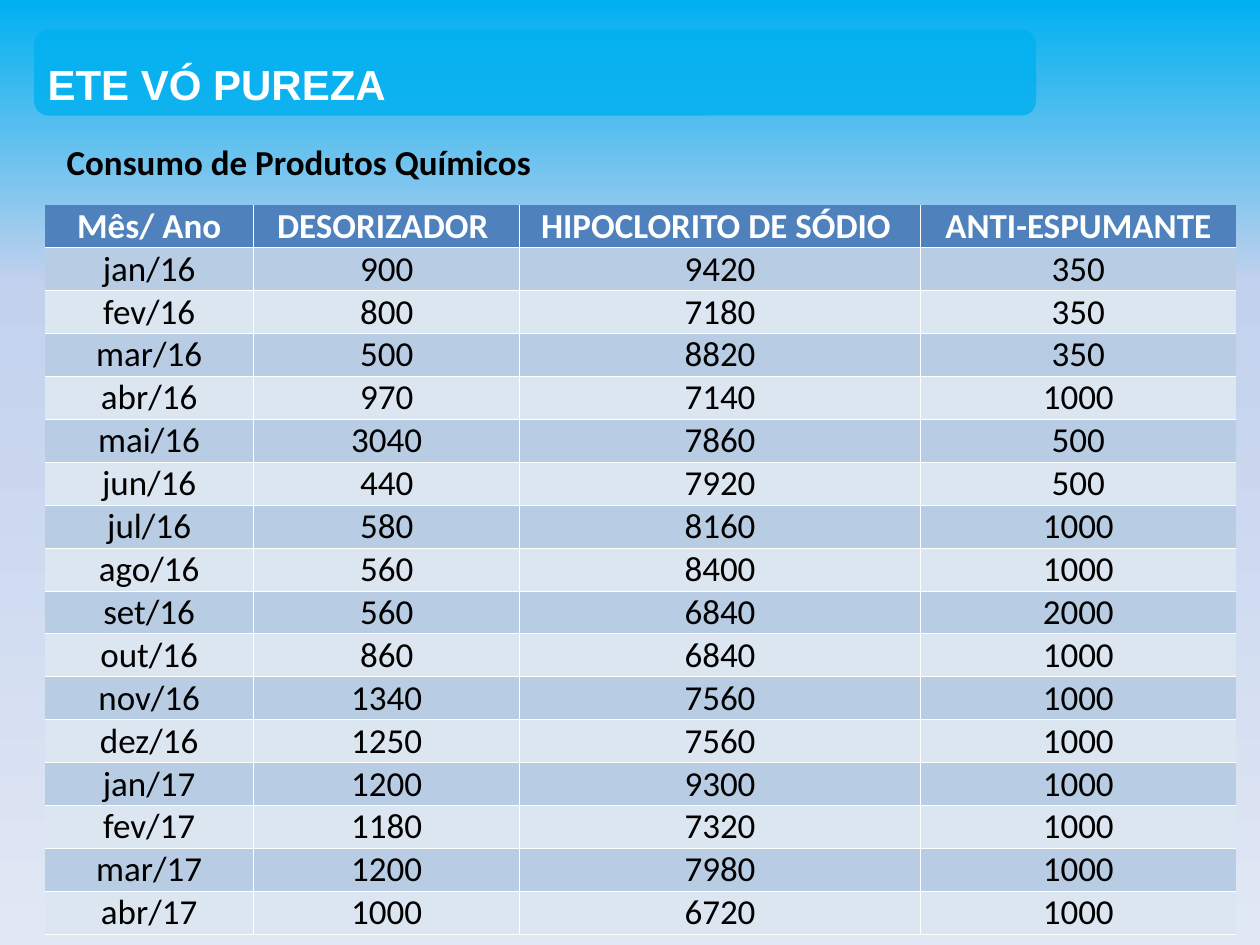
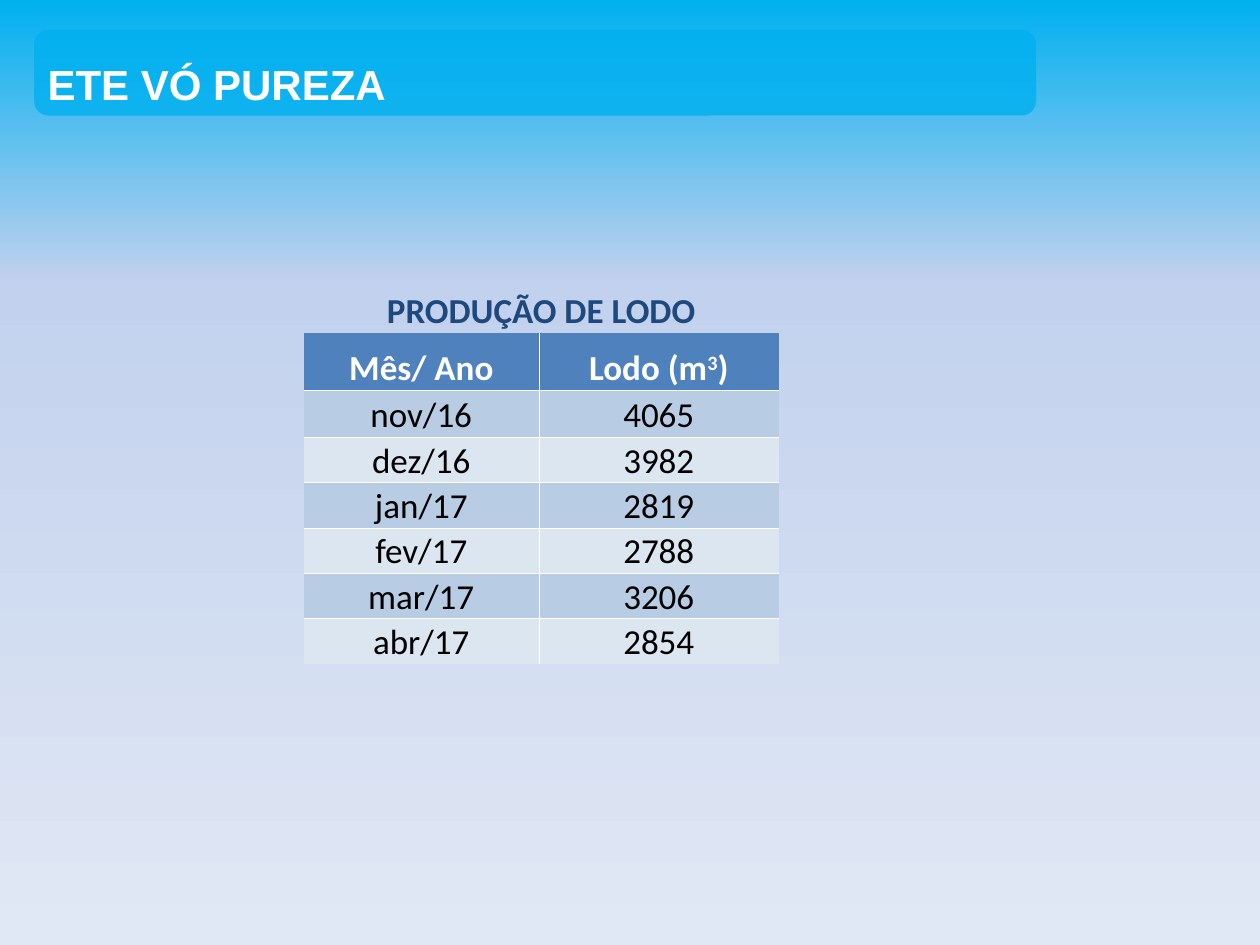
from lxml import etree
from pptx import Presentation
from pptx.dml.color import RGBColor
from pptx.enum.shapes import MSO_SHAPE as Shape
from pptx.enum.text import MSO_ANCHOR as Anchor, PP_ALIGN as Align
from pptx.oxml.ns import qn
from pptx.util import Pt

SKY, WHITE, BLACK, NAVY = "00B0F0", "FFFFFF", "000000", "1F497D"
HEADER_FILL = "4F81BD"
BAND_FILLS = ("B8CCE4", "DCE6F1")
BACKGROUND_STOPS = ((0, SKY), (30, "C2D1ED"), (100, "E1E8F5"))
TITLE = "ETE VÓ PUREZA"

CHEMICALS = [
    ("Mês/ Ano", "DESORIZADOR ", "HIPOCLORITO DE SÓDIO ", "ANTI-ESPUMANTE"),
    ("jan/16", 900, 9420, 350),
    ("fev/16", 800, 7180, 350),
    ("mar/16", 500, 8820, 350),
    ("abr/16", 970, 7140, 1000),
    ("mai/16", 3040, 7860, 500),
    ("jun/16", 440, 7920, 500),
    ("jul/16", 580, 8160, 1000),
    ("ago/16", 560, 8400, 1000),
    ("set/16", 560, 6840, 2000),
    ("out/16", 860, 6840, 1000),
    ("nov/16", 1340, 7560, 1000),
    ("dez/16", 1250, 7560, 1000),
    ("jan/17", 1200, 9300, 1000),
    ("fev/17", 1180, 7320, 1000),
    ("mar/17", 1200, 7980, 1000),
    ("abr/17", 1000, 6720, 1000),
]
SLUDGE = [
    ("Mês/ Ano", "Lodo (m^3^)"),
    ("nov/16", 4065),
    ("dez/16", 3982),
    ("jan/17", 2819),
    ("fev/17", 2788),
    ("mar/17", 3206),
    ("abr/17", 2854),
]


def color(value):
    return RGBColor.from_string(value)


def style(para, size, hex_color, bold=True, font="Calibri"):
    for span in para.runs:
        span.font.name = font
        span.font.size = Pt(size)
        span.font.bold = bold
        span.font.color.rgb = color(hex_color)


def add_color(parent, hex_color):
    return etree.SubElement(parent, qn("a:srgbClr"), val=hex_color)


def paint_background(layout):
    fill = layout.background.fill
    fill.gradient()
    fill.gradient_angle = 270
    stops = fill.gradient_stops
    stop_list = layout.element.find(".//" + qn("a:gsLst"))
    for stop in list(stop_list):
        stop_list.remove(stop)
    for percent, hex_color in BACKGROUND_STOPS:
        stop = etree.SubElement(stop_list, qn("a:gs"), pos=str(percent * 1000))
        add_color(stop, hex_color)


def move_band_to_layout(page, layout):
    """Draw the title band and place it behind the layout's placeholders."""
    band = page.shapes.add_shape(Shape.ROUNDED_RECTANGLE, Pt(19.5), Pt(17), Pt(572.5), Pt(49))
    band.shadow.inherit = False
    band.line.fill.background()
    band.fill.solid()
    band.fill.fore_color.rgb = color(SKY)
    tint = band.element.spPr.find(".//" + qn("a:srgbClr"))
    etree.SubElement(tint, qn("a:alpha"), val="80000")
    layout.shapes.element.insert(2, band.element)


def place_title(layout):
    title = layout.placeholders[0]
    title.left, title.top, title.width, title.height = Pt(20), Pt(26), Pt(578), Pt(44)
    title.text_frame.vertical_anchor = Anchor.MIDDLE


def add_page(deck, layout):
    page = deck.slides.add_slide(layout)
    frame = page.shapes.title.text_frame
    frame.text = TITLE
    frame.paragraphs[0].alignment = Align.LEFT
    style(frame.paragraphs[0], 24, WHITE, font="Arial")
    return page


def add_subtitle(page, text):
    box = page.shapes.add_textbox(Pt(31), Pt(77), Pt(689), Pt(31.5))
    box.text_frame.word_wrap = True
    box.text_frame.text = text
    style(box.text_frame.paragraphs[0], 20, BLACK)


def set_borders(cell, white_sides):
    """Thin white lines on the sides named by L, R, T and B; none elsewhere."""
    properties = cell._tc.get_or_add_tcPr()
    for index, side in enumerate("LRTB"):
        line = etree.Element(qn(f"a:ln{side}"), w=str(Pt(0.5)))
        if side in white_sides:
            add_color(etree.SubElement(line, qn("a:solidFill")), WHITE)
        else:
            etree.SubElement(line, qn("a:noFill"))
        properties.insert(index, line)


def fill_cell(cell, text, hex_color, bold, fill, anchor, margin):
    """Write a cell; text between carets is superscript."""
    para = cell.text_frame.paragraphs[0]
    para.alignment = Align.CENTER
    for index, part in enumerate(str(text).split("^")):
        span = para.add_run()
        span.text = part
        if index % 2:
            span.font._element.set("baseline", "30000")
    style(para, 20, hex_color, bold)
    cell.vertical_anchor = anchor
    cell.margin_left = cell.margin_right = cell.margin_top = Pt(margin)
    cell.margin_bottom = 0
    if fill:
        cell.fill.solid()
        cell.fill.fore_color.rgb = color(fill)
    else:
        cell.fill.background()


def add_data_table(page, left, top, widths, heights, rows, anchor, margin=0,
                   caption=None, closing_line=False):
    first = 1 if caption else 0
    table = page.shapes.add_table(len(heights), len(widths), Pt(left), Pt(top),
                                  Pt(sum(widths)), Pt(sum(heights))).table
    for column, width in zip(table.columns, widths):
        column.width = Pt(width)
    for row, height in zip(table.rows, heights):
        row.height = Pt(height)
    if caption:
        table.cell(0, 0).merge(table.cell(0, len(widths) - 1))
        fill_cell(table.cell(0, 0), caption, NAVY, True, None, anchor, margin)
        for column in range(len(widths)):
            set_borders(table.cell(0, column), "")
    for r, values in enumerate(rows):
        header = r == 0
        fill = HEADER_FILL if header else BAND_FILLS[(r - 1) % 2]
        for c, value in enumerate(values):
            cell = table.cell(r + first, c)
            fill_cell(cell, value, WHITE if header else BLACK, header, fill, anchor, margin)
            sides = "L" if c else ""
            sides += "R" if c < len(values) - 1 else ""
            sides += "" if header else "T"
            sides += "B" if closing_line or r < len(rows) - 1 else ""
            set_borders(cell, sides)


def main():
    deck = Presentation()
    deck.slide_width, deck.slide_height = Pt(720), Pt(540)
    layout = deck.slide_layouts[5]
    paint_background(layout)
    place_title(layout)

    chemicals_page = add_page(deck, layout)
    move_band_to_layout(chemicals_page, layout)
    add_data_table(chemicals_page, 25.5, 117, (119.5, 152, 229, 180.5),
                   [24] * len(CHEMICALS), CHEMICALS, Anchor.MIDDLE, closing_line=True)
    add_subtitle(chemicals_page, "Consumo de Produtos Químicos")

    sludge_page = add_page(deck, layout)
    add_data_table(sludge_page, 173.5, 139.5, (134.5, 137),
                   [51, 32.5, 27] + [25.9] * 5, SLUDGE, Anchor.BOTTOM,
                   margin=0.7, caption="PRODUÇÃO DE LODO")
    deck.save("out.pptx")


if __name__ == "__main__":
    main()
